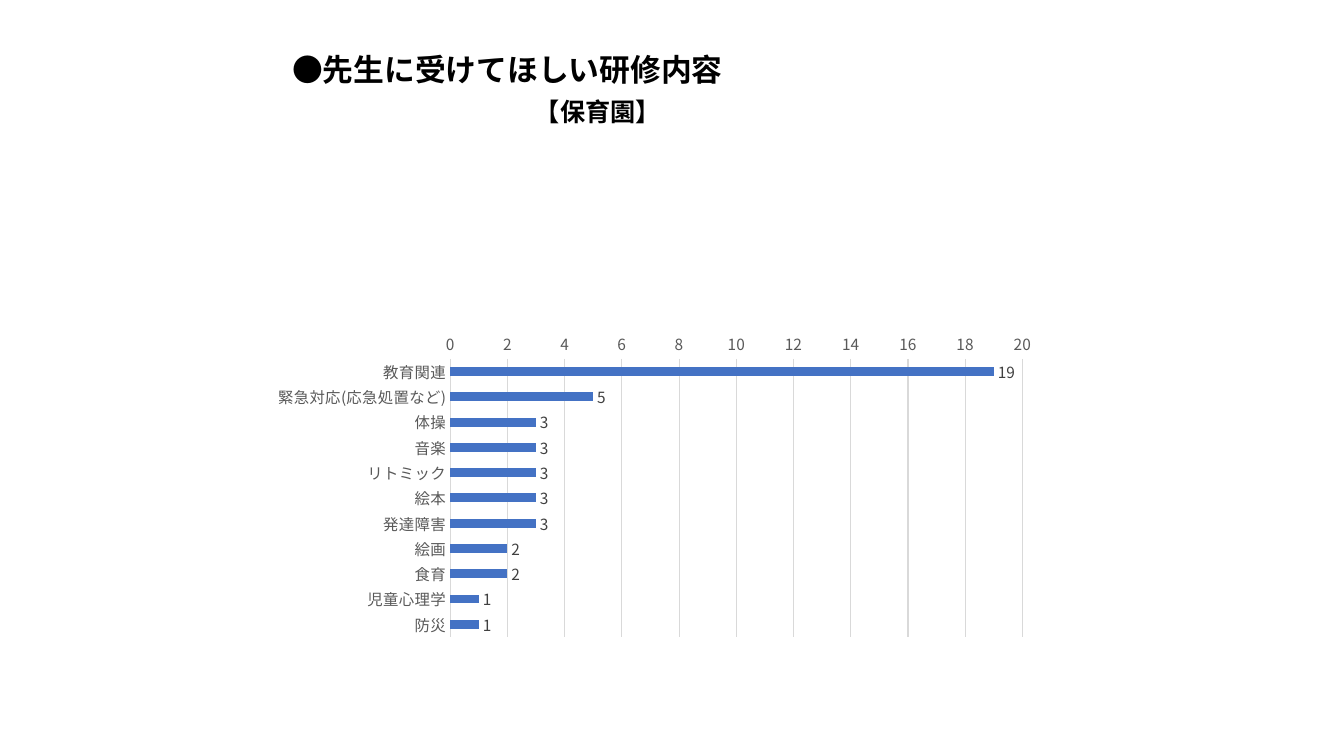
from dataclasses import dataclass

from lxml import etree
from pptx import Presentation
from pptx.chart.axis import CategoryAxis, ValueAxis
from pptx.chart.chart import Chart
from pptx.chart.data import CategoryChartData
from pptx.dml.color import RGBColor
from pptx.enum.chart import XL_CHART_TYPE, XL_LABEL_POSITION, XL_TICK_MARK
from pptx.enum.text import MSO_ANCHOR, MSO_AUTO_SIZE, PP_ALIGN
from pptx.oxml.ns import qn
from pptx.shapes.autoshape import Shape
from pptx.text.text import Font
from pptx.util import Cm, Pt

BAR = XL_CHART_TYPE.BAR_CLUSTERED
OUT = XL_LABEL_POSITION.OUTSIDE_END
NO_TICK = XL_TICK_MARK.NONE
MIDDLE = MSO_ANCHOR.MIDDLE
NO_FIT = MSO_AUTO_SIZE.NONE
LEFT = PP_ALIGN.LEFT

FACE = "Noto Sans CJK JP"
BLACK, GREY, DARK = "000000", "595959", "404040"
PALE, BLUE = "D9D9D9", "4472C4"


@dataclass
class Box:
    left: float
    top: float
    width: float
    height: float

    def lengths(self) -> tuple[Cm, Cm, Cm, Cm]:
        return Cm(self.left), Cm(self.top), Cm(self.width), Cm(self.height)


@dataclass
class Head:
    text: str
    box: Box
    size: int


@dataclass
class Topic:
    name: str
    count: int


TITLE = Head("●先生に受けてほしい研修内容", Box(7.11, 1.14, 26, 1.2), 22)
GROUP = Head("【保育園】", Box(13.23, 2.31, 3.71, 1.02), 18)
FRAME = Box(6.43, 6.58, 21.56, 10.49)
PLOT = {"x": 0.228, "y": 0.235, "w": 0.669, "h": 0.668}
TOPICS = [
    Topic("教育関連", 19),
    Topic("緊急対応(応急処置など)", 5),
    Topic("体操", 3),
    Topic("音楽", 3),
    Topic("リトミック", 3),
    Topic("絵本", 3),
    Topic("発達障害", 3),
    Topic("絵画", 2),
    Topic("食育", 2),
    Topic("児童心理学", 1),
    Topic("防災", 1),
]


def rgb(code: str) -> RGBColor:
    return RGBColor.from_string(code)


def style(font: Font, size: int, color: str, bold: bool = False) -> None:
    font.size = Pt(size)
    font.bold = bold
    font.color.rgb = rgb(color)
    font.name = FACE
    east = etree.Element(qn("a:ea"), typeface=FACE)
    font._element.find(qn("a:latin")).addnext(east)


def write(shape: Shape, head: Head) -> None:
    shape.left, shape.top, shape.width, shape.height = head.box.lengths()
    frame = shape.text_frame
    frame.text = head.text
    frame.word_wrap = True
    frame.auto_size = NO_FIT
    frame.vertical_anchor = MIDDLE
    line = frame.paragraphs[0]
    line.alignment = LEFT
    style(line.runs[0].font, head.size, BLACK, True)


def place(chart: Chart) -> None:
    area = chart._chartSpace.chart.plotArea
    for old in area.findall(qn("c:layout")):
        area.remove(old)
    layout = etree.Element(qn("c:layout"))
    area.insert(0, layout)
    manual = etree.SubElement(layout, qn("c:manualLayout"))
    rules = {"layoutTarget": "inner", "xMode": "edge", "yMode": "edge"}
    for key, val in (rules | PLOT).items():
        etree.SubElement(manual, qn(f"c:{key}"), val=str(val))


def tidy(axis: CategoryAxis | ValueAxis) -> None:
    axis.major_tick_mark = axis.minor_tick_mark = NO_TICK
    style(axis.tick_labels.font, 11, GREY)


def plot(chart: Chart) -> None:
    chart.has_legend = False
    chart.has_title = False
    style(chart.font, 10, BLACK)
    place(chart)

    names = chart.category_axis
    tidy(names)
    names.reverse_order = True
    names.format.line.color.rgb = rgb(PALE)
    names.format.line.width = Pt(0.75)

    scale = chart.value_axis
    tidy(scale)
    scale.minimum_scale, scale.maximum_scale, scale.major_unit = 0, 20, 2
    scale.format.line.fill.background()
    grid = scale.major_gridlines.format.line
    grid.color.rgb = rgb(PALE)
    grid.width = Pt(0.75)

    bars = chart.plots[0]
    bars.gap_width = 182
    bars.vary_by_categories = False
    row = bars.series[0]
    row.format.fill.solid()
    row.format.fill.fore_color.rgb = rgb(BLUE)
    labels = row.data_labels
    labels.show_value = True
    labels.position = OUT
    style(labels.font, 11, DARK)


def main() -> None:
    deck = Presentation()
    deck.slide_width, deck.slide_height = Cm(33.87), Cm(19.05)
    slide = deck.slides.add_slide(deck.slide_layouts[5])
    write(slide.shapes.title, TITLE)
    write(slide.shapes.add_textbox(*GROUP.box.lengths()), GROUP)

    data = CategoryChartData()
    data.categories = [topic.name for topic in TOPICS]
    data.add_series("Series 1", [topic.count for topic in TOPICS])
    plot(slide.shapes.add_chart(BAR, *FRAME.lengths(), data).chart)
    deck.save("out.pptx")


if __name__ == "__main__":
    main()
